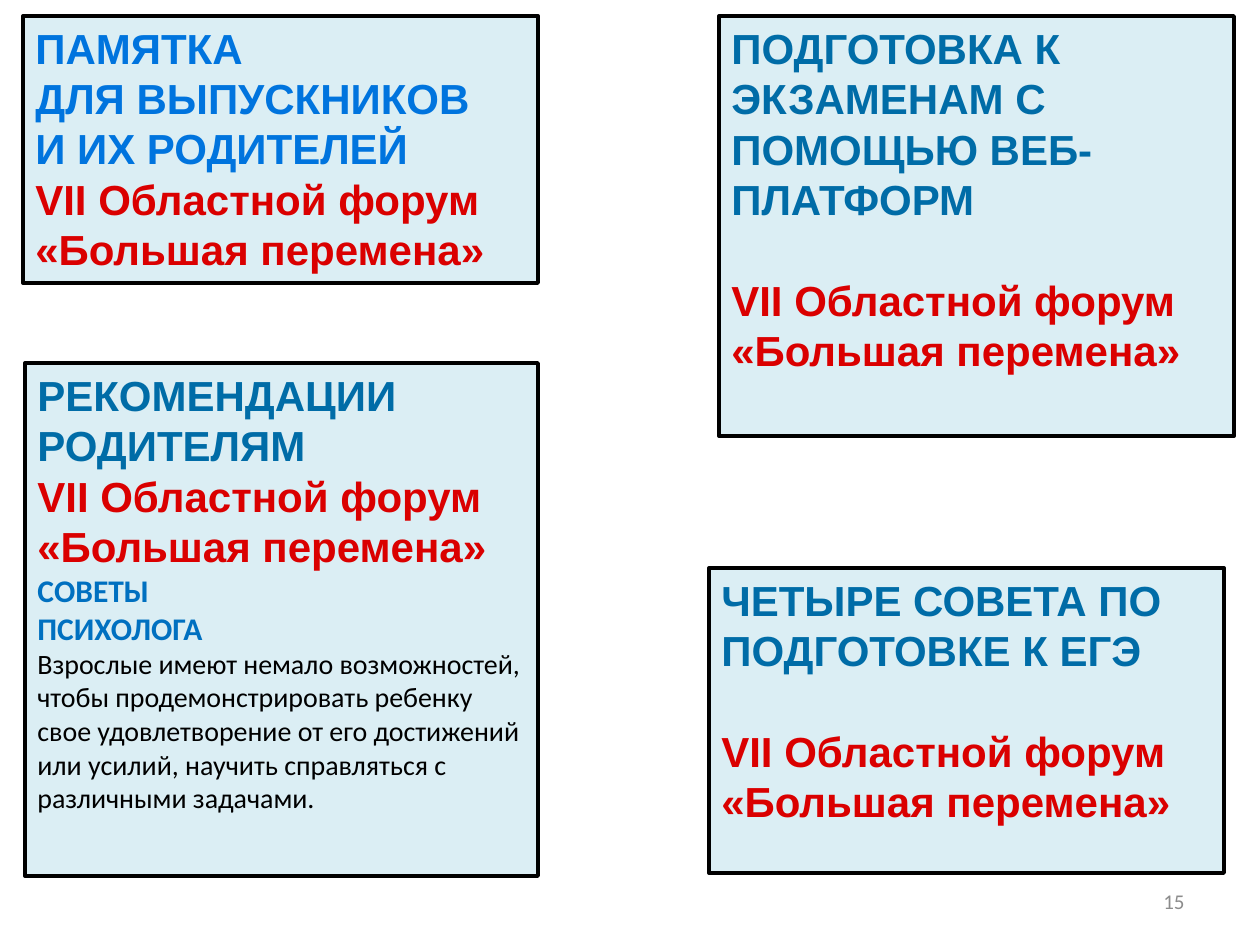
from dataclasses import dataclass

from pptx import Presentation
from pptx.dml.color import RGBColor
from pptx.enum.shapes import MSO_SHAPE
from pptx.enum.text import MSO_ANCHOR, PP_ALIGN
from pptx.util import Emu, Pt

RECTANGLE = MSO_SHAPE.RECTANGLE
TOP, MIDDLE = MSO_ANCHOR.TOP, MSO_ANCHOR.MIDDLE
LEFT, RIGHT = PP_ALIGN.LEFT, PP_ALIGN.RIGHT

PX_PER_INCH = 126
HEADING_SIZE = 24
HEADING_LEADING = 28.8
BRIGHT_BLUE, DEEP_BLUE, ADVICE_BLUE = "0074DE", "006CA7", "0070C0"
RED, BLACK, GREY, PALE_BLUE = "DA0000", "000000", "8C8C8C", "DBEEF4"


@dataclass(frozen=True)
class Line:
    text: str
    color: str
    size: int = HEADING_SIZE
    font: str = "Arial"
    bold: bool = True
    leading: float | None = HEADING_LEADING
    gap: float = 0


@dataclass(frozen=True)
class Card:
    left: int
    top: int
    width: int
    height: int
    lines: list[Line]


def px(length: int) -> Emu:
    return Emu(round(length * 914400 / PX_PER_INCH))


def rgb(color: str) -> RGBColor:
    return RGBColor.from_string(color)


def write_line(para, text: str, *, color: str, size: int, font: str, bold: bool,
               leading: float | None = None, gap: float = 0, align=LEFT) -> None:
    para.alignment = align
    para.space_before = Pt(gap)
    if leading:
        para.line_spacing = Pt(leading)
    span = para.add_run()
    span.text = text
    span.font.name = font
    span.font.size = Pt(size)
    span.font.bold = bold
    span.font.color.rgb = rgb(color)


def draw_card(page, card: Card) -> None:
    box = page.shapes.add_shape(RECTANGLE, px(card.left), px(card.top),
                                px(card.width), px(card.height))
    box.shadow.inherit = False
    box.fill.solid()
    box.fill.fore_color.rgb = rgb(PALE_BLUE)
    box.line.color.rgb = rgb(BLACK)
    box.line.width = Pt(2.25)
    frame = box.text_frame
    frame.word_wrap = True
    frame.vertical_anchor = TOP
    for index, line in enumerate(card.lines):
        para = frame.add_paragraph() if index else frame.paragraphs[0]
        write_line(para, line.text, color=line.color, size=line.size, font=line.font,
                   bold=line.bold, leading=line.leading, gap=line.gap)


def draw_page_number(page, number: str) -> None:
    box = page.shapes.add_textbox(px(903), px(876), px(294), px(50))
    frame = box.text_frame
    frame.word_wrap = True
    frame.vertical_anchor = MIDDLE
    write_line(frame.paragraphs[0], number, color=GREY, size=12, font="Calibri",
               bold=False, align=RIGHT)


def forum(gap: float = 0) -> list[Line]:
    return [Line("VII Областной форум", RED, gap=gap), Line("«Большая перемена»", RED)]


def advice(text: str) -> Line:
    return Line(text, ADVICE_BLUE, size=18, font="Calibri", leading=None)


CARDS = [
    Card(23, 16, 515, 267, [
        Line("ПАМЯТКА", BRIGHT_BLUE),
        Line("ДЛЯ ВЫПУСКНИКОВ", BRIGHT_BLUE),
        Line("И ИХ РОДИТЕЛЕЙ", BRIGHT_BLUE),
        *forum(),
    ]),
    Card(719, 16, 515, 420, [
        Line("ПОДГОТОВКА К ЭКЗАМЕНАМ С ПОМОЩЬЮ ВЕБ-ПЛАТФОРМ", DEEP_BLUE),
        *forum(gap=HEADING_LEADING),
    ]),
    Card(25, 363, 513, 513, [
        Line("РЕКОМЕНДАЦИИ", DEEP_BLUE),
        Line("РОДИТЕЛЯМ", DEEP_BLUE),
        *forum(),
        advice("СОВЕТЫ"),
        advice("ПСИХОЛОГА"),
        Line("Взрослые имеют немало возможностей, чтобы продемонстрировать ребенку "
             "свое удовлетворение от его достижений или усилий, научить справляться "
             "с различными задачами.",
             BLACK, size=16, font="Calibri", bold=False, leading=None),
    ]),
    Card(709, 568, 515, 305, [
        Line("ЧЕТЫРЕ СОВЕТА ПО ПОДГОТОВКЕ К ЕГЭ", DEEP_BLUE),
        *forum(gap=HEADING_LEADING),
    ]),
]


def main() -> None:
    deck = Presentation()
    deck.slide_width, deck.slide_height = px(1260), px(945)
    page = deck.slides.add_slide(deck.slide_layouts[6])
    draw_page_number(page, "15")
    for card in CARDS:
        draw_card(page, card)
    deck.save("out.pptx")


if __name__ == "__main__":
    main()
